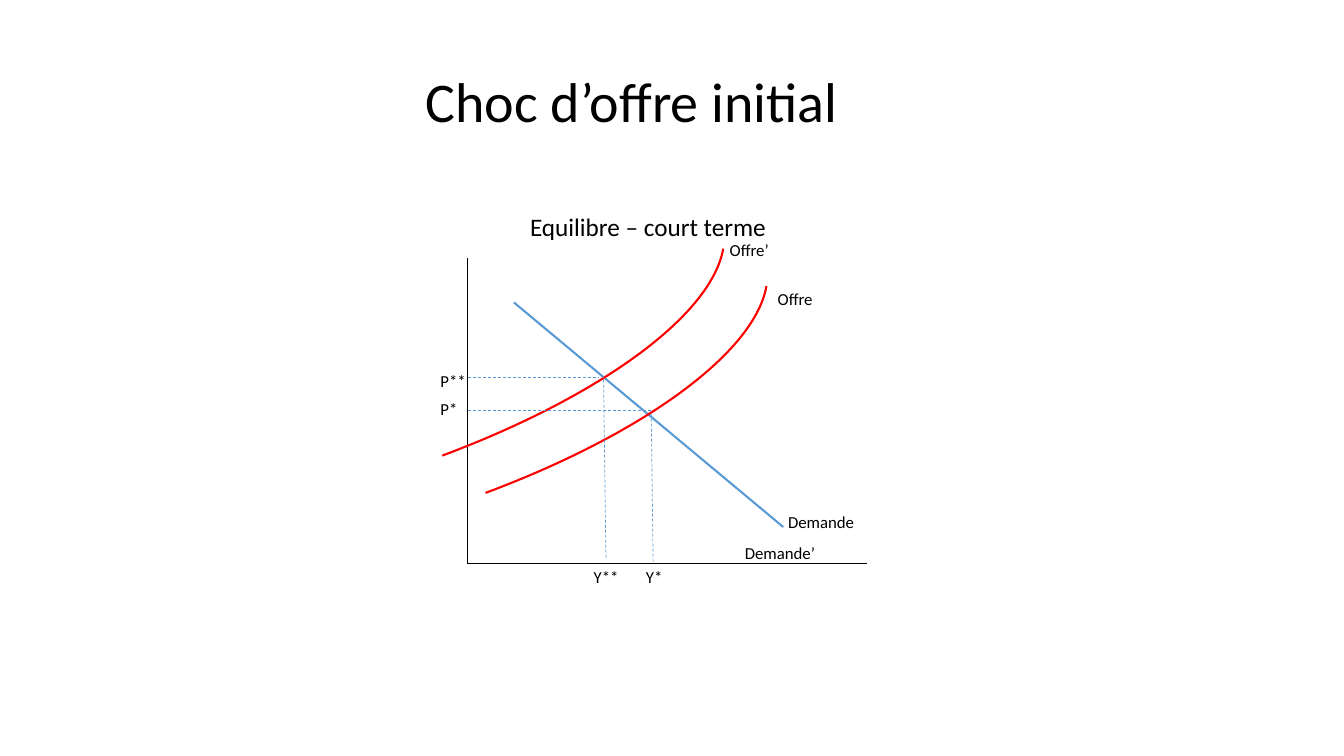
from lxml import etree
from pptx import Presentation
from pptx.dml.color import RGBColor
from pptx.enum.dml import MSO_LINE
from pptx.enum.shapes import MSO_CONNECTOR, MSO_SHAPE
from pptx.enum.text import MSO_ANCHOR, PP_ALIGN
from pptx.oxml.ns import qn
from pptx.util import Cm, Pt

DASH = MSO_LINE.DASH
STRAIGHT = MSO_CONNECTOR.STRAIGHT
ARC = MSO_SHAPE.ARC
TOP, BOTTOM = MSO_ANCHOR.TOP, MSO_ANCHOR.BOTTOM
LEFT, CENTER = PP_ALIGN.LEFT, PP_ALIGN.CENTER

FONT = "Calibri"
COLORS = {"ink": "000000", "demand": "5B9BD5", "supply": "FF0000"}

# Lengths in centimetres
AXIS_X, AXIS_Y = 11.79, 14.2
LABEL_H = 0.76


def color(name):
    return RGBColor.from_string(COLORS[name])


def add_text(slide, text, left, top, width, height=LABEL_H, size=12,
             align=LEFT, anchor=TOP, spacing=1.0):
    box = slide.shapes.add_textbox(Cm(left), Cm(top), Cm(width), Cm(height))
    frame = box.text_frame
    frame.word_wrap = True
    frame.vertical_anchor = anchor
    para = frame.paragraphs[0]
    para.alignment = align
    para.line_spacing = spacing
    run = para.add_run()
    run.text = text
    run.font.name = FONT
    run.font.size = Pt(size)
    run.font.color.rgb = color("ink")


def add_line(slide, start, end, hue, width=0.5, dash=None):
    line = slide.shapes.add_connector(
        STRAIGHT, Cm(start[0]), Cm(start[1]), Cm(end[0]), Cm(end[1]))
    line.line.color.rgb = color(hue)
    line.line.width = Pt(width)
    if dash is not None:
        line.line.dash_style = dash
    etree.SubElement(line._element.spPr, qn("a:effectLst"))


def add_curve(slide, left, top):
    curve = slide.shapes.add_shape(ARC, Cm(left), Cm(top), Cm(7.65), Cm(21.64))
    curve.adjustments[0] = 164.05
    curve.adjustments[1] = 196.09
    curve.rotation = 74.2
    curve.shadow.inherit = False
    curve.fill.background()
    curve.line.color.rgb = color("supply")
    curve.line.width = Pt(1.5)


def main():
    deck = Presentation()
    deck.slide_width, deck.slide_height = Cm(33.87), Cm(19.05)
    slide = deck.slides.add_slide(deck.slide_layouts[6])

    # Headings
    add_text(slide, "Choc d’offre initial", 0.84, 0.64, 30.15, 2.87,
             size=40, align=CENTER, anchor=BOTTOM, spacing=0.9)
    add_text(slide, "Equilibre – court terme", 13.11, 5.21, 7.95, 1.02, size=18)

    # Axes
    add_line(slide, (AXIS_X, 6.5), (AXIS_X, AXIS_Y), "ink")
    add_line(slide, (21.84, AXIS_Y), (AXIS_X, AXIS_Y), "ink")

    # Demand line and supply curves
    add_line(slide, (12.95, 7.62), (19.74, 13.28), "demand", 1.5)
    for left, top in ((5.05, -1.32), (3.96, -2.26)):
        add_curve(slide, left, top)

    # Dashed guides from each equilibrium to the axes
    for price, reach, peak, foot in (
            (10.34, 16.41, 16.41, (16.46, 14.15)),
            (9.5, 15.09, 15.21, (15.27, 14.05))):
        add_line(slide, (AXIS_X, price), (reach, price), "demand", dash=DASH)
        add_line(slide, foot, (peak, price), "demand", dash=DASH)

    # Labels of curves and axis values
    for text, left, top, width in (
            ("Offre", 19.35, 7.14, 3.4),
            ("Offre’", 18.14, 5.92, 3.4),
            ("Demande", 19.61, 12.78, 3.4),
            ("Demande’", 18.52, 13.56, 3.4),
            ("P*", 10.85, 9.93, 1.4),
            ("P**", 10.85, 9.22, 1.4),
            ("Y**", 14.71, 14.15, 1.4),
            ("Y*", 16.03, 14.15, 1.4)):
        add_text(slide, text, left, top, width)

    deck.save("out.pptx")


if __name__ == "__main__":
    main()
